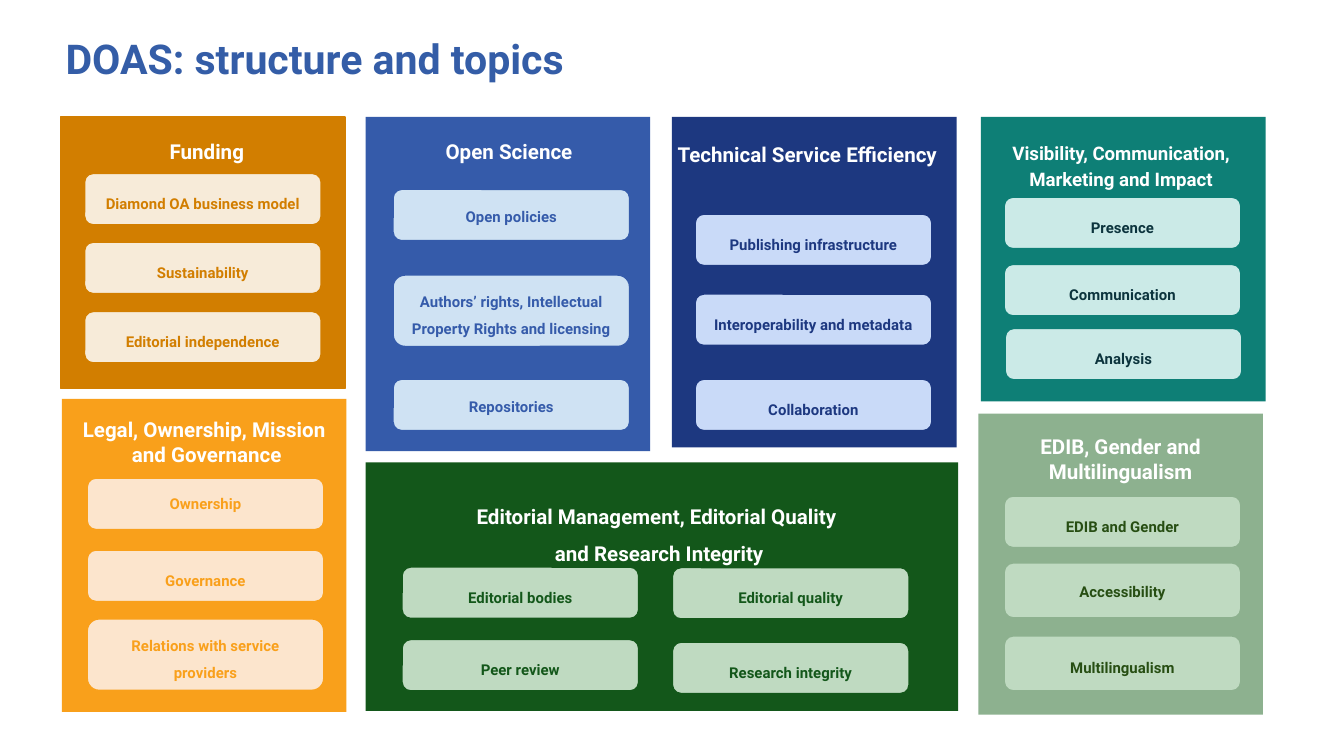
from pptx import Presentation
from pptx import util as u
from pptx.dml.color import RGBColor
from pptx.enum import shapes, text

COLOURS = {
    "title": "345DA7", "white": "FFFFFF",
    "ochre": "D27E00", "cream": "F7EBD9",
    "blue": "355BAA", "sky": "CFE2F3",
    "orange": "F9A01B", "peach": "FCE5CD",
    "green": "13571A", "mint": "BFDAC1",
    "navy": "1D3880", "ice": "C9DAF8",
    "sage": "8DB18F", "forest": "274E13",
    "teal": "0E7F76", "aqua": "CBEAE7", "ink": "0C343D",
}
TOPIC_WIDTH, LOW, MEDIUM, TALL = 4.47, 0.97, 1.04, 1.35
CENTRE = text.PP_ALIGN.CENTER

PANELS = [
    {"at": (1.14, 2.21, 5.38, 5.13), "fill": "ochre", "tint": "cream", "ink": "ochre", "edge": True,
     "heading": "Funding", "heading_at": (1.09, 2.46, 5.64, 0.76), "size": 11, "spacing": 1,
     "topics": [("Diamond OA business model", 1.6, 3.28, LOW, 1.5),
                ("Sustainability", 1.6, 4.58, LOW, 1.5),
                ("Editorial independence", 1.6, 5.89, LOW, 1.5)]},
    {"at": (6.91, 2.21, 5.38, 6.32), "fill": "blue", "tint": "sky", "ink": "blue", "edge": False,
     "heading": "Open Science ", "heading_at": (6.81, 2.46, 5.72, 0.76), "size": 11, "spacing": 1,
     "topics": [("Open policies", 7.43, 3.58, LOW, 1.15),
                ("Authors’ rights, Intellectual Property Rights and licensing", 7.43, 5.2, TALL, 1.5),
                ("Repositories", 7.43, 7.17, LOW, 1.15)]},
    {"at": (1.17, 7.54, 5.38, 5.92), "fill": "orange", "tint": "peach", "ink": "orange", "edge": False,
     "heading": "Legal, Ownership, Mission \nand Governance",
     "heading_at": (1.09, 7.72, 5.64, 1.24), "size": 11, "spacing": 1,
     "topics": [("Ownership", 1.65, 9.04, LOW, 1),
                ("Governance", 1.65, 10.4, LOW, 1.5),
                ("Relations with service providers", 1.65, 11.7, TALL, 1.5)]},
    {"at": (6.91, 8.74, 11.2, 4.7), "fill": "green", "tint": "mint", "ink": "green", "edge": False,
     "heading": "Editorial Management, Editorial Quality \vand Research Integrity",
     "heading_at": (7.09, 9.14, 10.74, 1.47), "size": 11, "spacing": 1.5,
     "topics": [("Editorial bodies", 7.6, 10.72, LOW, 1.5),
                ("Peer review", 7.6, 12.09, LOW, 1.5),
                ("Editorial quality", 12.71, 10.73, LOW, 1.5),
                ("Research integrity", 12.71, 12.14, LOW, 1.5)]},
    {"at": (12.7, 2.21, 5.38, 6.25), "fill": "navy", "tint": "ice", "ink": "navy", "edge": False,
     "heading": "Technical Service Efficiency",
     "heading_at": (12.57, 2.46, 5.38, 0.76), "size": 11, "spacing": 1.15,
     "topics": [("Publishing infrastructure", 13.14, 4.05, LOW, 1.5),
                ("Interoperability and metadata", 13.14, 5.56, LOW, 1.5),
                ("Collaboration", 13.14, 7.17, LOW, 1.5)]},
    {"at": (18.49, 7.82, 5.38, 5.69), "fill": "sage", "tint": "mint", "ink": "forest", "edge": False,
     "heading": "EDIB, Gender and Multilingualism",
     "heading_at": (18.49, 8.05, 5.38, 1.24), "size": 11, "spacing": 1,
     "topics": [("EDIB and Gender", 18.98, 9.38, LOW, 1.5),
                ("Accessibility", 18.98, 10.64, MEDIUM, 1.15),
                ("Multilingualism", 18.98, 12.02, MEDIUM, 1.5)]},
    {"at": (18.54, 2.21, 5.38, 5.38), "fill": "teal", "tint": "aqua", "ink": "ink", "edge": False,
     "heading": "Visibility, Communication, Marketing and Impact",
     "heading_at": (18.34, 2.46, 5.69, 1.22), "size": 10, "spacing": 1.15,
     "topics": [("Presence", 18.98, 3.73, LOW, 1.5),
                ("Communication", 18.98, 5, LOW, 1.5),
                ("Analysis", 19, 6.21, LOW, 1.5)]},
]


def write(box, words, size, colour, spacing, align, inset, anchor):
    frame = box.text_frame
    frame.text = words
    layout = {"word_wrap": True, "vertical_anchor": anchor}
    layout.update({f"margin_{side}": u.Cm(inset) for side in ("left", "top", "right", "bottom")})
    for name, value in layout.items():
        setattr(frame, name, value)
    for para in frame.paragraphs:
        para.alignment = align
        para.line_spacing = spacing
        for span in para.runs:
            for name, value in {"name": "Roboto", "size": u.Pt(size), "bold": True}.items():
                setattr(span.font, name, value)
            span.font.color.rgb = RGBColor.from_string(COLOURS[colour])


def add_block(page, kind, at, fill, edge):
    box = page.shapes.add_shape(kind, *map(u.Cm, at))
    box.shadow.inherit = False
    box.fill.solid()
    box.fill.fore_color.rgb = RGBColor.from_string(COLOURS[fill])
    if edge:
        box.line.color.rgb = RGBColor.from_string(COLOURS[edge])
        box.line.width = u.Pt(0.75)
    else:
        box.line.fill.background()
    return box


deck = Presentation()
deck.slide_width, deck.slide_height = u.Cm(25.4), u.Cm(14.29)
page = deck.slides.add_slide(deck.slide_layouts[6])

title = page.shapes.add_textbox(*map(u.Cm, (0.99, 0.38, 22.71, 1.47)))
write(title, "DOAS: structure and topics", 22, "title", 1,
      text.PP_ALIGN.LEFT, 0.25, text.MSO_ANCHOR.TOP)

for panel in PANELS:
    add_block(page, shapes.MSO_SHAPE.RECTANGLE, panel["at"], panel["fill"],
              panel["fill"] if panel["edge"] else None)
    heading = page.shapes.add_textbox(*map(u.Cm, panel["heading_at"]))
    write(heading, panel["heading"], panel["size"], "white", panel["spacing"],
          CENTRE, 0.16, text.MSO_ANCHOR.TOP)
    for words, left, top, height, spacing in panel["topics"]:
        topic = add_block(page, shapes.MSO_SHAPE.ROUNDED_RECTANGLE,
                          (left, top, TOPIC_WIDTH, height), panel["tint"], panel["fill"])
        write(topic, words, 8, panel["ink"], spacing, CENTRE, 0.16, text.MSO_ANCHOR.MIDDLE)

deck.save("out.pptx")
